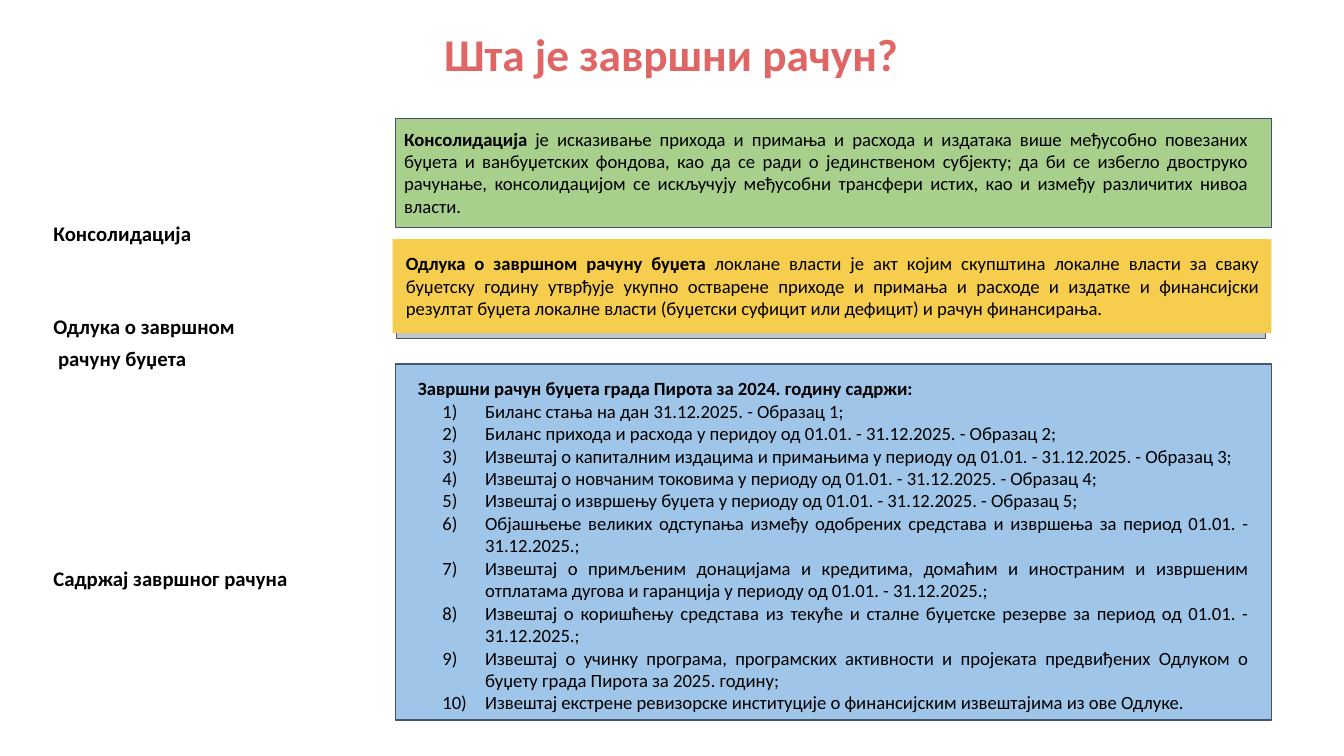
from dataclasses import dataclass

from lxml.etree import SubElement as Sub
from pptx import Presentation as Deck
from pptx.dml.color import RGBColor as Rgb
from pptx.enum.shapes import MSO_SHAPE as Kind
from pptx.enum.text import MSO_ANCHOR as Anchor, PP_ALIGN as Align
from pptx.oxml.ns import qn
from pptx.util import Cm, Pt

FONT = "Calibri"
HUES = {
    "title": "E06666", "text": "000000", "edge": "44546A",
    "green": "A8D08C", "gray": "BFC7CA", "gold": "F6CD4C", "blue": "9FC5E8",
}


@dataclass
class Area:
    left: float
    top: float
    wide: float
    high: float


@dataclass
class Panel:
    area: Area
    hue: str
    edge: bool = True


@dataclass
class Label:
    top: float
    lines: list[str]


@dataclass
class Note:
    area: Area
    head: str
    body: str = ""


def hue(name: str) -> Rgb:
    return Rgb.from_string(HUES[name])


def dims(area: Area) -> list[Cm]:
    return [Cm(n) for n in (area.left, area.top, area.wide, area.high)]


def add_run(para, text: str, size: float, bold: bool = False,
            tint: str = "text") -> None:
    run = para.add_run()
    run.text = text
    font = run.font
    font.name, font.size, font.bold = FONT, Pt(size), bold
    font.color.rgb = hue(tint)


def add_box(slide, area: Area, pad: float):
    frame = slide.shapes.add_textbox(*dims(area)).text_frame
    frame.word_wrap = True
    frame.margin_left = frame.margin_right = Cm(0.25)
    frame.margin_top = frame.margin_bottom = Cm(pad)
    return frame


def add_panel(slide, panel: Panel) -> None:
    shape = slide.shapes.add_shape(Kind.RECTANGLE, *dims(panel.area))
    shape.shadow.inherit = False
    shape.fill.solid()
    shape.fill.fore_color.rgb = hue(panel.hue)
    if panel.edge:
        shape.line.color.rgb = hue("edge")
        shape.line.width = Pt(0.75)
    else:
        shape.line.fill.background()


def add_label(slide, label: Label) -> None:
    frame = add_box(slide, Area(0.76, label.top, 6, 1.2), 0.13)
    for i, line in enumerate(label.lines):
        para = frame.paragraphs[0] if i == 0 else frame.add_paragraph()
        para.line_spacing = 0.7
        if i:
            para.space_before = Pt(7.5)
        add_run(para, line, 11.1, True)


def add_note(slide, note: Note):
    frame = add_box(slide, note.area, 0.25)
    para = frame.paragraphs[0]
    para.alignment = Align.JUSTIFY
    add_run(para, note.head, 10, True)
    if note.body:
        add_run(para, note.body, 10)
    return frame


def add_item(frame, text: str) -> None:
    para = frame.add_paragraph()
    para.alignment = Align.JUSTIFY
    props = para._p.get_or_add_pPr()
    props.set("marL", str(Cm(1.27)))
    props.set("indent", str(-Cm(0.81)))
    tint = Sub(props, qn("a:buClr"))
    Sub(tint, qn("a:srgbClr"), val=HUES["text"])
    Sub(props, qn("a:buAutoNum"), type="arabicParenR")
    add_run(para, text, 10)


PANELS = [
    Panel(Area(7.47, 2.24, 16.56, 2.06), "green"),
    Panel(Area(7.49, 4.67, 16.43, 1.73), "gray"),
    Panel(Area(7.42, 4.52, 16.61, 1.78), "gold", False),
    Panel(Area(7.47, 6.88, 16.56, 6.73), "blue"),
]
LABELS = [
    Label(4.17, ["Консолидација"]),
    Label(5.94, ["Одлука о завршном", " рачуну буџета"]),
    Label(10.69, ["Садржај завршног рачуна"]),
]
NOTES = [
    Note(Area(7.39, 2.16, 16.43, 2.21), "Консолидација",
         " је исказивање прихода и примања и расхода и издатака више међусобно "
         "повезаних буџета и ванбуџетских фондова, као да се ради о јединственом "
         "субјекту; да би се избегло двоструко рачунање, консолидацијом се "
         "искључују међусобни трансфери истих, као и између различитих нивоа "
         "власти."),
    Note(Area(7.42, 4.52, 16.61, 1.78), "Одлука о завршном рачуну буџета",
         " локлане власти је акт којим скупштина локалне власти за сваку "
         "буџетску годину утврђује укупно остварене приходе и примања и расходе "
         "и издатке и финансијски резултат буџета локалне власти (буџетски "
         "суфицит или дефицит) и рачун финансирања."),
]
LIST = Note(Area(7.65, 6.88, 16.18, 6.86),
            "Завршни рачун буџета града Пирота за 2024. годину садржи:")
ITEMS = [
    "Биланс стања на дан 31.12.2025. - Образац 1;",
    "Биланс прихода и расхода у перидоу од 01.01. - 31.12.2025. - Образац 2;",
    "Извештај о капиталним издацима и примањима у периоду од 01.01. - "
    "31.12.2025. - Образац 3;",
    "Извештај о новчаним токовима у периоду од 01.01. - 31.12.2025. - Образац 4;",
    "Извештај о извршењу буџета у периоду од 01.01. - 31.12.2025. - Образац 5;",
    "Објашњење великих одступања између одобрених средстава и извршења за "
    "период 01.01. - 31.12.2025.;",
    "Извештај о примљеним донацијама и кредитима, домаћим и иностраним и "
    "извршеним отплатама дугова и гаранција у периоду од 01.01. - 31.12.2025.;",
    "Извештај о коришћењу средстава из текуће и сталне буџетске резерве за "
    "период од 01.01. - 31.12.2025.;",
    "Извештај о учинку програма, програмских активности и пројеката "
    "предвиђених Одлуком о буџету града Пирота за 2025. годину;",
    "Извештај екстрене ревизорске институције о финансијским извештајима из "
    "ове Одлуке.",
]


def main() -> None:
    deck = Deck()
    deck.slide_width, deck.slide_height = Cm(25.4), Cm(14.29)
    slide = deck.slides.add_slide(deck.slide_layouts[6])

    # Title
    frame = add_box(slide, Area(0.76, 0.48, 23.85, 1.19), 0.13)
    frame.vertical_anchor = Anchor.BOTTOM
    para = frame.paragraphs[0]
    para.alignment, para.line_spacing = Align.CENTER, 0.9
    add_run(para, "Шта је завршни рачун?", 24.3, True, "title")

    # Row labels on the left
    for label in LABELS:
        add_label(slide, label)

    # Coloured panels and their text
    for panel in PANELS:
        add_panel(slide, panel)
    for note in NOTES:
        add_note(slide, note)

    # Numbered contents
    frame = add_note(slide, LIST)
    for item in ITEMS:
        add_item(frame, item)

    deck.save("out.pptx")


if __name__ == "__main__":
    main()
